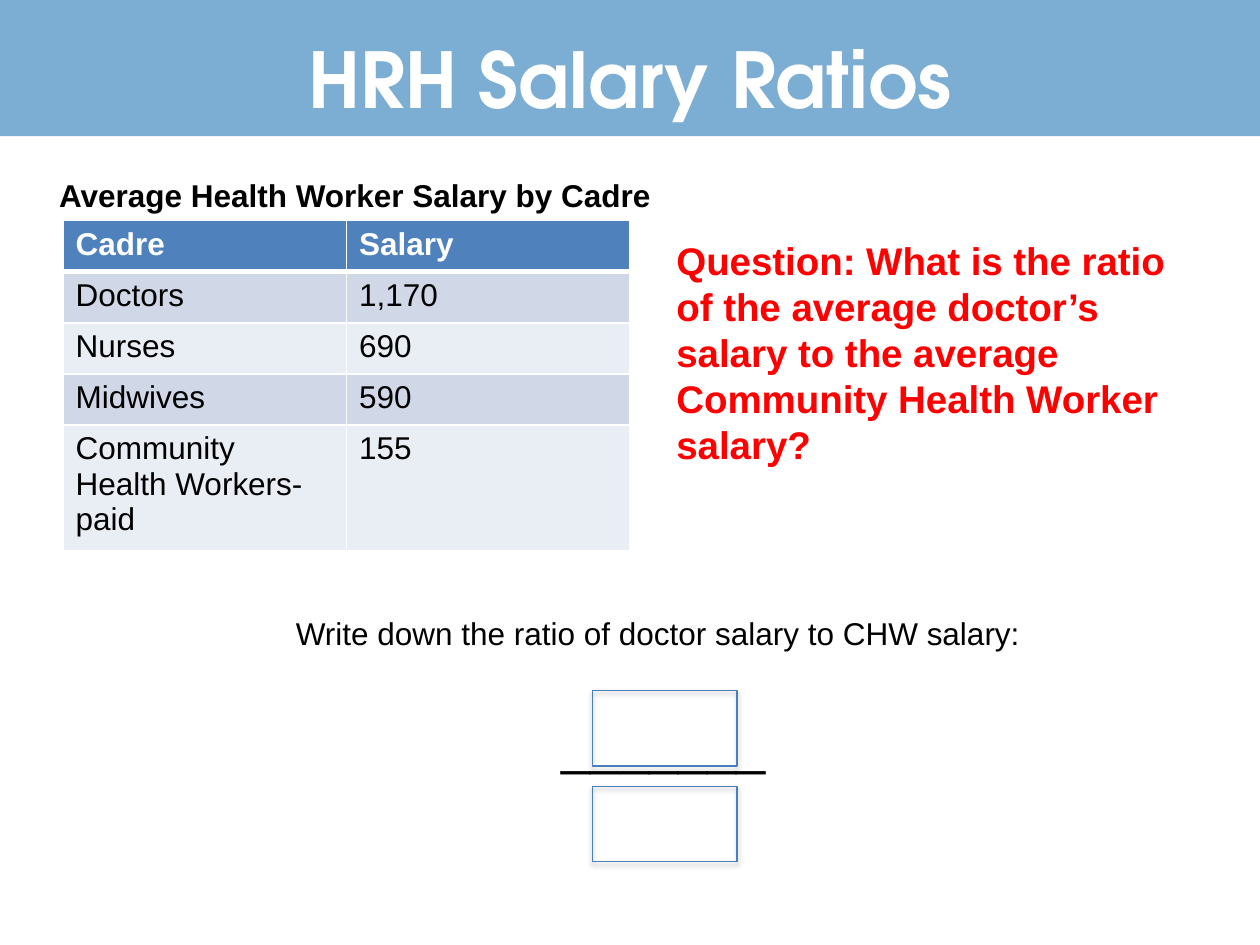
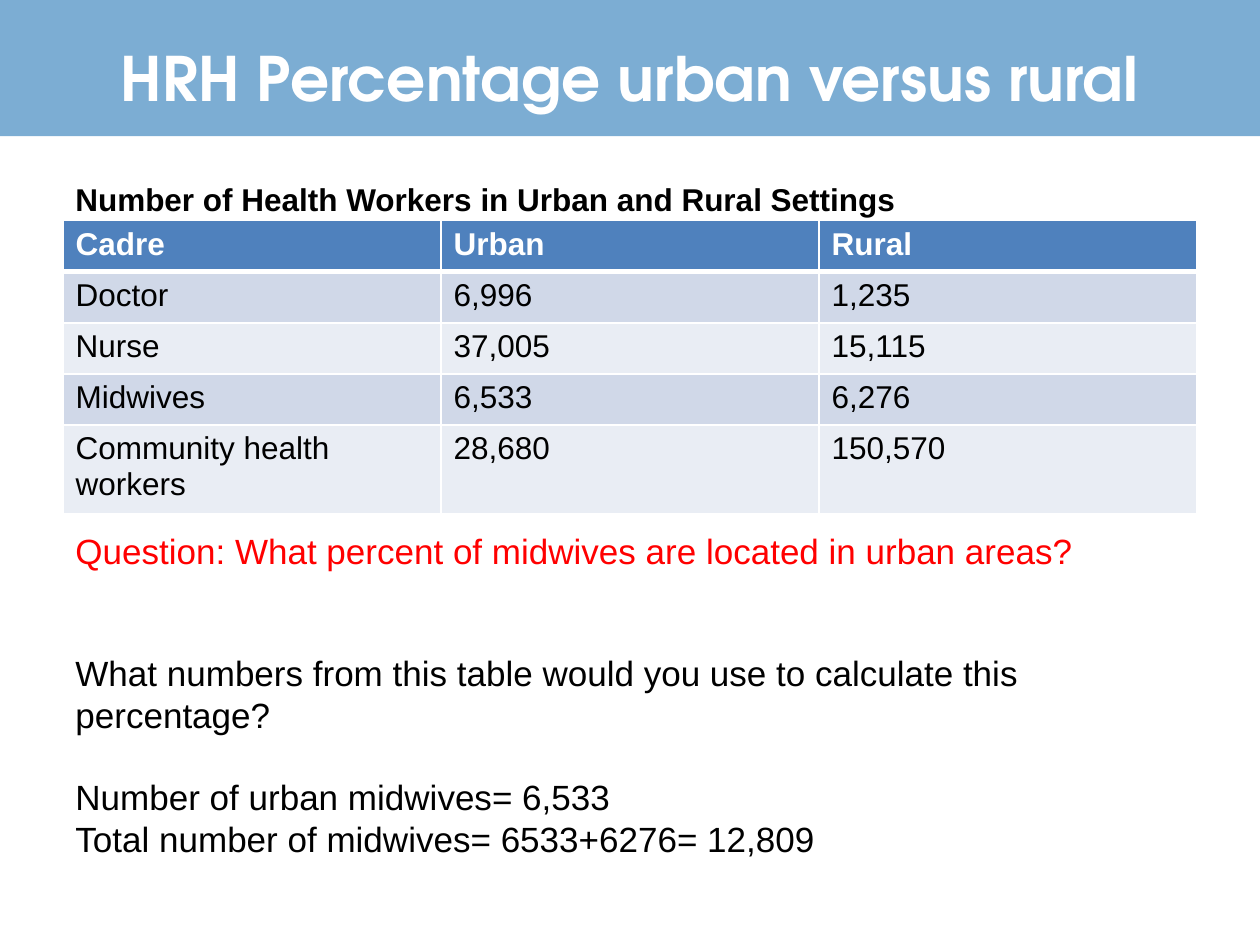
from dataclasses import dataclass

from lxml.etree import SubElement
from pptx import Presentation
from pptx.dml.color import RGBColor as RGB
from pptx.enum.shapes import MSO_SHAPE as SHAPE
from pptx.enum.text import MSO_ANCHOR as ANCHOR, PP_ALIGN as ALIGN
from pptx.oxml.ns import qn
from pptx.util import Inches, Pt


@dataclass(frozen=True)
class Theme:
    band: str = "7CADD3"
    header: str = "4F81BD"
    stripes: tuple = ("D0D8E8", "E9EDF4")
    outline: str = "4B7EBC"
    white: str = "FFFFFF"
    black: str = "000000"
    question: str = "FF0000"
    title_font: str = "TeX Gyre Adventor"
    body_font: str = "Arial"
    title_size: int = 44
    long_title_size: int = 35
    bar_size: int = 30
    question_size: int = 22
    body_size: int = 20
    label_size: int = 18
    line_height: float = 1.15


THEME = Theme()


def color(value):
    return RGB.from_string(value)


def add_run(p, text, size, fill=THEME.black, bold=False, font=THEME.body_font):
    r = p.add_run()
    r.text = text
    r.font.name = font
    r.font.size = Pt(size)
    r.font.bold = bold
    r.font.color.rgb = color(fill)


def add_text_box(slide, box):
    tf = slide.shapes.add_textbox(*map(Inches, box)).text_frame
    tf.word_wrap = True
    return tf


def add_text(slide, box, text, size, **style):
    tf = add_text_box(slide, box)
    add_run(tf.paragraphs[0], text, size, **style)
    return tf


def add_paragraph(tf, text, size, lines_before=0, align=None):
    p = tf.add_paragraph()
    p.alignment = align
    p.space_before = Pt(lines_before * size * THEME.line_height)
    add_run(p, text, size)


def add_rect(slide, box):
    sp = slide.shapes.add_shape(SHAPE.RECTANGLE, *map(Inches, box))
    sp.shadow.inherit = False
    return sp


def add_titled_slide(prs, title, size):
    slide = prs.slides.add_slide(prs.slide_layouts[6])
    band = add_rect(slide, (0, 0, 10, 1.08))
    band.fill.solid()
    band.fill.fore_color.rgb = color(THEME.band)
    band.line.fill.background()
    tf = add_text(slide, (0.5, 0.15, 9, 0.93), title, size,
                  fill=THEME.white, bold=True, font=THEME.title_font)
    tf.vertical_anchor = ANCHOR.MIDDLE
    tf.paragraphs[0].alignment = ALIGN.CENTER
    return slide


def set_borders(cell, row):
    widths = {"L": 1, "R": 1, "T": 3 if row == 1 else 1, "B": 3 if row == 0 else 1}
    tc_pr = cell._tc.get_or_add_tcPr()
    for side, width in widths.items():
        ln = SubElement(tc_pr, qn(f"a:ln{side}"), w=str(Pt(width)))
        fill = SubElement(ln, qn("a:solidFill"))
        SubElement(fill, qn("a:srgbClr"), val=THEME.white)


def add_data_table(slide, width, rows):
    box = (0.5, 1.75, width, 2.03)
    table = slide.shapes.add_table(len(rows), len(rows[0]), *map(Inches, box)).table
    for i, values in enumerate(rows):
        is_header = i == 0
        background = THEME.header if is_header else THEME.stripes[(i - 1) % 2]
        for j, value in enumerate(values):
            cell = table.cell(i, j)
            set_borders(cell, i)
            cell.fill.solid()
            cell.fill.fore_color.rgb = color(background)
            add_run(cell.text_frame.paragraphs[0], value, THEME.label_size,
                    fill=THEME.white if is_header else THEME.black, bold=is_header)


def add_answer_box(slide, top):
    sp = add_rect(slide, (4.7, top, 1.15, 0.6))
    sp.fill.background()
    sp.line.color.rgb = color(THEME.outline)
    sp.line.width = Pt(0.75)
    effects = sp._element.spPr.find(qn("a:effectLst"))
    shadow = SubElement(effects, qn("a:outerShdw"), blurRad=str(Pt(3.1)),
                        dist=str(Pt(1.8)), dir="5400000", rotWithShape="0")
    shade = SubElement(shadow, qn("a:srgbClr"), val=THEME.black)
    SubElement(shade, qn("a:alpha"), val="35000")


def add_salary_slide(prs):
    slide = add_titled_slide(prs, "HRH Salary Ratios", THEME.title_size)
    add_data_table(slide, 4.5, [
        ("Cadre", "Salary"),
        ("Doctors", "1,170"),
        ("Nurses", "690"),
        ("Midwives", "590"),
        ("Community Health Workers- paid", "155"),
    ])
    add_text(slide, (5.27, 1.83, 4.23, 1.95),
             "Question: What is the ratio of the average doctor’s salary "
             "to the average Community Health Worker salary?",
             THEME.question_size, fill=THEME.question, bold=True)
    add_text(slide, (0.37, 1.35, 5.08, 0.4), "Average Health Worker Salary by Cadre",
             THEME.label_size, bold=True)
    ratio = add_text(slide, (2.25, 4.82, 6.04, 1.72),
                     "Write down the ratio of doctor salary to CHW salary:",
                     THEME.label_size)
    add_paragraph(ratio, "_______", THEME.bar_size, lines_before=1, align=ALIGN.CENTER)
    for top in (5.48, 6.24):
        add_answer_box(slide, top)


def add_urban_rural_slide(prs):
    slide = add_titled_slide(prs, "HRH Percentage urban versus rural",
                             THEME.long_title_size)
    add_data_table(slide, 9, [
        ("Cadre", "Urban", "Rural"),
        ("Doctor", "6,996", "1,235"),
        ("Nurse", "37,005", "15,115"),
        ("Midwives", "6,533", "6,276"),
        ("Community health workers", "28,680", "150,570"),
    ])
    tf = add_text(slide, (0.5, 4.15, 8.31, 3.13),
                  "Question: What percent of midwives are located in urban areas?",
                  THEME.body_size, fill=THEME.question)
    for text, lines_before in (
        ("What numbers from this table would you use to calculate this percentage?", 2),
        ("Number of urban midwives= 6,533", 1),
        ("Total number of midwives= 6533+6276= 12,809", 0),
    ):
        add_paragraph(tf, text, THEME.body_size, lines_before)
    add_text(slide, (0.5, 1.38, 8.9, 0.4),
             "Number of Health Workers in Urban and Rural Settings",
             THEME.label_size, bold=True)


def main():
    prs = Presentation()
    prs.slide_width, prs.slide_height = Inches(10), Inches(7.5)
    add_salary_slide(prs)
    add_urban_rural_slide(prs)
    prs.save("out.pptx")


if __name__ == "__main__":
    main()
